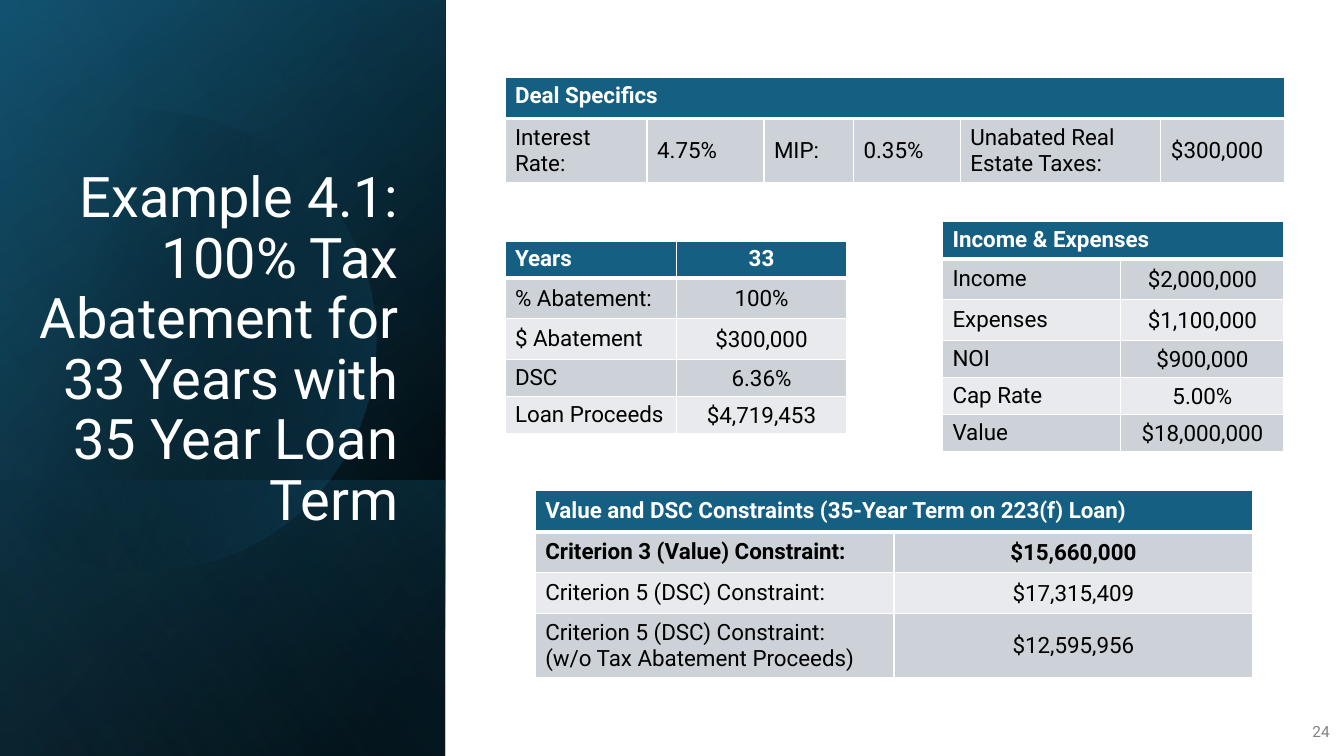
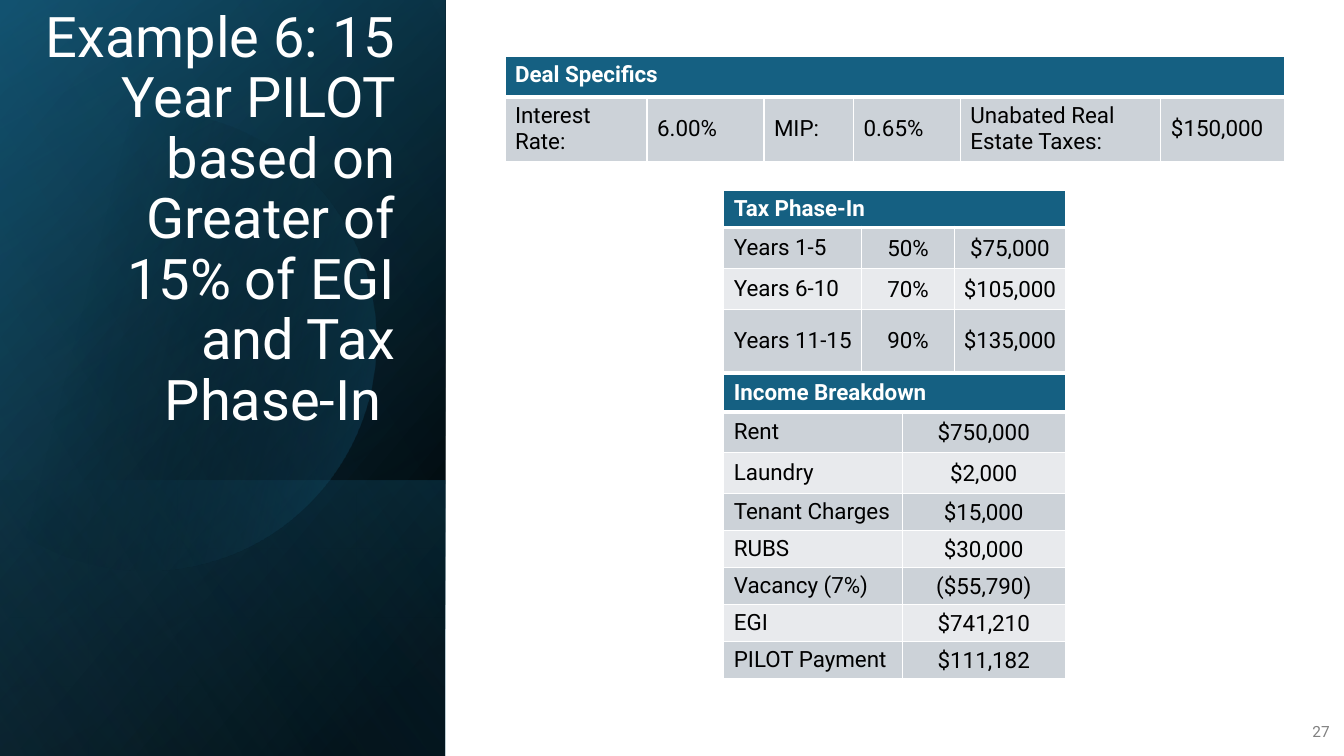
from math import cos, radians, sin

from lxml.etree import SubElement
from pptx import Presentation
from pptx.dml.color import RGBColor
from pptx.enum.shapes import MSO_SHAPE as Preset
from pptx.enum.text import MSO_ANCHOR as Anchor, PP_ALIGN as Align
from pptx.oxml.ns import qn
from pptx.util import Pt

# Shared style
FONT = "Roboto"
WHITE = RGBColor(0xFF, 0xFF, 0xFF)
BLACK = RGBColor(0x00, 0x00, 0x00)
GRAY = RGBColor(0x80, 0x80, 0x80)
TEAL = RGBColor(0x15, 0x60, 0x82)
DEEP_TEAL = RGBColor(0x10, 0x48, 0x62)
SKY = RGBColor(0x46, 0xB1, 0xE1)
BANDS = (RGBColor(0xE8, 0xEA, 0xED), RGBColor(0xCC, 0xD2, 0xD8))

PANEL_WIDTH, SLIDE_HEIGHT = 318, 540
SHORT, NORMAL, TALL = 26, 29.2, 44.7  # table row heights
LEFT, CENTER = Align.LEFT, Align.CENTER

# Panel layers: top, height, angle, then (position %, colour, opacity %) per stop
LOWER_LAYERS = [
    (0, SLIDE_HEIGHT, 50, [(8, BLACK, 100), (100, DEEP_TEAL, 100)]),
    (0, SLIDE_HEIGHT, 30, [(0, BLACK, 0), (99, TEAL, 46)]),
    (343, 197, 130, [(2, TEAL, 29), (100, BLACK, 30)]),
]
CIRCLE_LAYER = (None, None, 14, [(29, BLACK, 0), (100, TEAL, 43)])
TOP_LAYER = (0, SLIDE_HEIGHT, 120, [(0, BLACK, 0), (99, SKY, 11)])
LAYERS = LOWER_LAYERS + [CIRCLE_LAYER, TOP_LAYER]

# Circle cut by the left slide edge
CIRCLE_X, CIRCLE_Y, RADIUS = 104.4, 243.4, 164.2
ARC = [(Pt(CIRCLE_X + RADIUS * cos(radians(angle))),
        Pt(CIRCLE_Y + RADIUS * sin(radians(angle))))
       for angle in range(-135, 136, 3)]


def write(frame, text, size, color, align, anchor, bold=False):
    frame.vertical_anchor = anchor
    for index, line in enumerate(text.split("\n")):
        paragraph = frame.add_paragraph() if index else frame.paragraphs[0]
        paragraph.alignment = align
        run = paragraph.add_run()
        run.text = line
        run.font.name, run.font.size, run.font.bold = FONT, Pt(size), bold
        run.font.color.rgb = color


def add_table(slide, left, top, widths, heights, rows,
              bold_rows=1, header_anchor=Anchor.TOP, body_align=CENTER):
    """First row is the header; a single header text spans all columns."""
    table = slide.shapes.add_table(
        len(rows), len(widths), Pt(left), Pt(top),
        Pt(sum(widths)), Pt(sum(heights))).table
    for column, width in zip(table.columns, widths):
        column.width = Pt(width)
    for row, height in zip(table.rows, heights):
        row.height = Pt(height)

    for row_index, texts in enumerate(rows):
        header = row_index == 0
        for column_index in range(len(widths)):
            cell = table.cell(row_index, column_index)
            properties = cell._tc.get_or_add_tcPr()
            thick = {0: "lnB", 1: "lnT"}.get(row_index)
            for side in ("lnL", "lnR", "lnT", "lnB"):
                border = SubElement(properties, qn(f"a:{side}"),
                                    w=str(Pt(3 if side == thick else 1)))
                solid = SubElement(border, qn("a:solidFill"))
                SubElement(solid, qn("a:srgbClr"), val=str(WHITE))
            cell.fill.solid()
            cell.fill.fore_color.rgb = TEAL if header else BANDS[row_index % 2]

            if column_index >= len(texts):
                continue
            align = body_align if column_index else LEFT
            if align == CENTER and not header:
                cell.margin_left = cell.margin_right = cell.margin_top = Pt(0.75)
                cell.margin_bottom = 0
            cell.vertical_anchor = header_anchor if header else Anchor.MIDDLE
            write(cell.text_frame, texts[column_index], 16,
                  WHITE if header else BLACK, align,
                  cell.vertical_anchor, row_index < bold_rows)
    if len(rows[0]) == 1:
        table.cell(0, 0).merge(table.cell(0, len(widths) - 1))


presentation = Presentation()
presentation.slide_width, presentation.slide_height = Pt(960), Pt(SLIDE_HEIGHT)

# Per slide: title, title place, page number, deal table top, deal values
SLIDES = [
    ("Example 4.1: 100% Tax Abatement for 33 Years with 35 Year Loan Term",
     (20.9, 117.4), "24", 55.4, ("4.75%", "0.35%", "$300,000")),
    ("Example 6: 15 Year PILOT based on Greater of 15% of EGI and Tax Phase-In ",
     (18.7, 46.1), "27", 40.3, ("6.00%", "0.65%", "$150,000")),
]

for title, (title_left, title_top), number, deal_top, deal in SLIDES:
    slide = presentation.slides.add_slide(presentation.slide_layouts[6])

    # Gradient panel
    for top, height, angle, stops in LAYERS:
        if height is None:
            builder = slide.shapes.build_freeform(*ARC[0])
            builder.add_line_segments(ARC[1:], close=True)
            shape = builder.convert_to_shape()
        else:
            # Laid on its side, then turned upright and mirrored
            shape = slide.shapes.add_shape(
                Preset.RECTANGLE, Pt((PANEL_WIDTH - height) / 2),
                Pt(top + (height - PANEL_WIDTH) / 2), Pt(height), Pt(PANEL_WIDTH))
            shape.rotation = 90
            shape.element.spPr.find(qn("a:xfrm")).set("flipH", "1")
        shape.shadow.inherit = False
        shape.line.fill.background()
        shape.fill.gradient()
        shape.fill.gradient_angle = 360 - angle
        for stop, (position, color, opacity) in zip(shape.fill.gradient_stops, stops):
            stop.position = position / 100
            stop.color.rgb = color
        for element, stop in zip(shape.element.iter(qn("a:srgbClr")), stops):
            SubElement(element, qn("a:alpha"), val=str(stop[2] * 1000))

    # Title and page number
    title_box = slide.shapes.add_textbox(
        Pt(title_left), Pt(title_top), Pt(270.7), Pt(266.4))
    title_box.text_frame.word_wrap = True
    write(title_box.text_frame, title, 40, WHITE, Align.RIGHT, Anchor.BOTTOM)
    title_box.text_frame.paragraphs[0].line_spacing = 0.9

    number_box = slide.shapes.add_textbox(Pt(921.6), Pt(508.3), Pt(35.3), Pt(28.8))
    number_box.text_frame.word_wrap = True
    write(number_box.text_frame, number, 11, GRAY, Align.RIGHT, Anchor.MIDDLE)
    number_box.text_frame.paragraphs[0].space_after = Pt(6)

    # Deal specifics
    rate, premium, taxes = deal
    add_table(slide, 360.7, deal_top, [101.5, 83.5, 64, 76.3, 143.3, 88.6],
              [NORMAL, TALL],
              [["Deal Specifics"],
               ["Interest Rate:", rate, "MIP:", premium,
                "Unabated Real Estate Taxes:", taxes]], body_align=LEFT)

abatement_slide, pilot_slide = presentation.slides

# Abatement slide tables
add_table(abatement_slide, 360.7, 172.1, [122.4, 121.7],
          [SHORT, NORMAL, NORMAL, SHORT, SHORT],
          [["Years", "33"],
           ["% Abatement:", "100%"],
           ["$ Abatement", "$300,000"],
           ["DSC", "6.36%"],
           ["Loan Proceeds", "$4,719,453"]])

add_table(abatement_slide, 673.2, 158.4, [127.4, 116.6],
          [SHORT, NORMAL, NORMAL] + [SHORT] * 3,
          [["Income & Expenses"],
           ["Income", "$2,000,000"],
           ["Expenses", "$1,100,000"],
           ["NOI", "$900,000"],
           ["Cap Rate", "5.00%"],
           ["Value", "$18,000,000"]])

add_table(abatement_slide, 382.3, 350.6, [256.3, 256.3], [NORMAL] * 3 + [TALL],
          [["Value and DSC Constraints (35-Year Term on 223(f) Loan)"],
           ["Criterion 3 (Value) Constraint:", "$15,660,000"],
           ["Criterion 5 (DSC) Constraint:", "$17,315,409"],
           ["Criterion 5 (DSC) Constraint:\n(w/o Tax Abatement Proceeds)",
            "$12,595,956"]],
          bold_rows=2, header_anchor=Anchor.MIDDLE)

# PILOT slide tables
add_table(pilot_slide, 517, 267.8, [127.4, 116.6],
          [SHORT, NORMAL, NORMAL] + [SHORT] * 5,
          [["Income Breakdown"],
           ["Rent", "$750,000"],
           ["Laundry", "$2,000"],
           ["Tenant Charges", "$15,000"],
           ["RUBS", "$30,000"],
           ["Vacancy (7%)", "($55,790)"],
           ["EGI", "$741,210"],
           ["PILOT Payment", "$111,182"]])

add_table(pilot_slide, 517, 136.1, [98.6, 66.2, 79.2],
          [SHORT, NORMAL, NORMAL, TALL],
          [["Tax Phase-In"],
           ["Years 1-5", "50%", "$75,000"],
           ["Years 6-10", "70%", "$105,000"],
           ["Years 11-15", "90%", "$135,000"]])

presentation.save("out.pptx")
